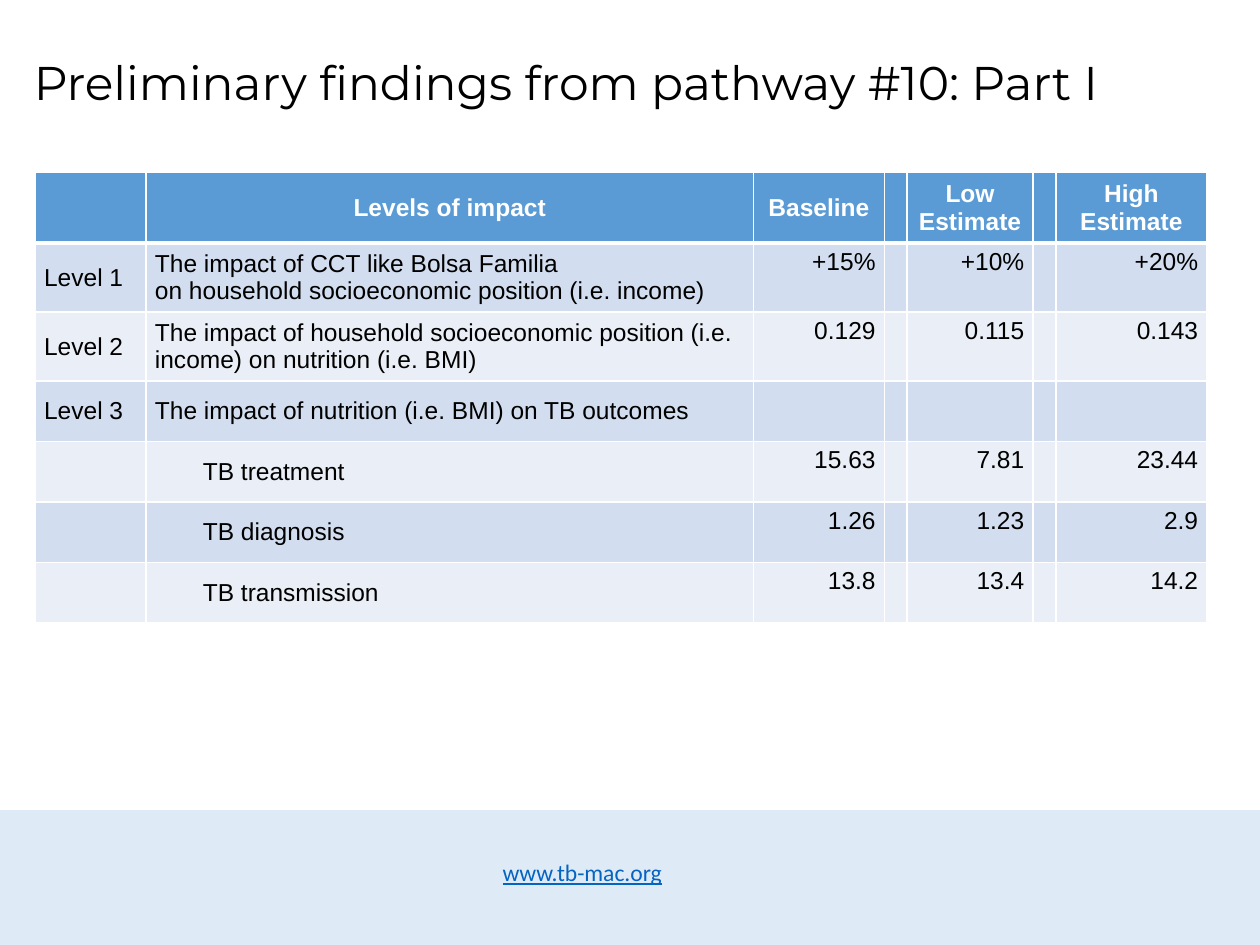
from lxml import etree
from pptx import Presentation
from pptx import util as u
from pptx.dml.color import RGBColor
from pptx.enum import shapes, text
from pptx.oxml.ns import qn

WIDTH, HEIGHT = 10, 7.5
TITLE = "Preliminary findings from pathway #10: Part I"
SITE = "www.tb-mac.org"
HEADINGS = ("", "Levels of impact", "Baseline", "Low Estimate", "High Estimate")
FINDINGS = [
    ("Level 1", "The impact of CCT like Bolsa Familia\n"
     "on household socioeconomic position (i.e. income)", "+15%", "+10%", "+20%"),
    ("Level 2", "The impact of household socioeconomic position (i.e. income) "
     "on nutrition (i.e. BMI)", "0.129", "0.115", "0.143"),
    ("Level 3", "The impact of nutrition (i.e. BMI) on TB outcomes", "", "", ""),
    ("", "TB treatment", "15.63", "7.81", "23.44"),
    ("", "TB diagnosis", "1.26", "1.23", "2.9"),
    ("", "TB transmission", "13.8", "13.4", "14.2"),
]
COLUMN_WIDTHS = (0.88, 4.82, 1.04, 0.18, 1, 0.18, 1.2)
ROW_HEIGHTS = (0.56, 0.53, 0.53, 0.48, 0.48, 0.48, 0.48)
CONTENT_COLUMNS = (0, 1, 2, 4, 6)
HEADER_FILL, BANDS = "5B9BD5", ("D2DEEF", "EAEFF7")
LEFT, CENTER, RIGHT = text.PP_ALIGN.LEFT, text.PP_ALIGN.CENTER, text.PP_ALIGN.RIGHT
TOP, MIDDLE = text.MSO_ANCHOR.TOP, text.MSO_ANCHOR.MIDDLE


def color(value):
    return RGBColor.from_string(value)


def write(frame, words, size=14, font="Arial", ink="000000", bold=False,
          underline=False, align=LEFT, spacing=None):
    for number, line in enumerate(words.split("\n")):
        paragraph = frame.add_paragraph() if number else frame.paragraphs[0]
        paragraph.alignment = align
        paragraph.line_spacing = spacing
        run = paragraph.add_run()
        run.text = line
        run.font.size, run.font.name = u.Pt(size), font
        run.font.bold, run.font.underline = bold, underline
        run.font.color.rgb = color(ink)


def add_words(slide, box, words, wrap=True, anchor=TOP, **style):
    frame = slide.shapes.add_textbox(*map(u.Inches, box)).text_frame
    frame.word_wrap, frame.vertical_anchor = wrap, anchor
    write(frame, words, **style)


def add_border(cell, side, points):
    line = etree.SubElement(cell._tc.get_or_add_tcPr(), qn("a:ln" + side),
                            w=str(u.Pt(points)))
    fill = etree.SubElement(line, qn("a:solidFill"))
    etree.SubElement(fill, qn("a:srgbClr"), val="FFFFFF")


def format_cell(cell, fill, row):
    for side in "LRTB":
        thick = (row, side) in ((0, "B"), (1, "T"))
        add_border(cell, side, 3 if thick else 1)
    cell.fill.solid()
    cell.fill.fore_color.rgb = color(fill)
    cell.margin_left = cell.margin_right = u.Inches(0.07)
    cell.margin_top = cell.margin_bottom = u.Inches(0.04)


def add_findings(slide):
    table = slide.shapes.add_table(
        len(ROW_HEIGHTS), len(COLUMN_WIDTHS), u.Inches(0.28), u.Inches(1.37),
        u.Inches(sum(COLUMN_WIDTHS)), u.Inches(sum(ROW_HEIGHTS))).table
    table.first_row = table.horz_banding = False
    for column, width in zip(table.columns, COLUMN_WIDTHS):
        column.width = u.Inches(width)
    for row, height in zip(table.rows, ROW_HEIGHTS):
        row.height = u.Inches(height)

    for row, entries in enumerate([HEADINGS] + FINDINGS):
        header = row == 0
        fill = HEADER_FILL if header else BANDS[(row - 1) % 2]
        for column in range(len(COLUMN_WIDTHS)):
            format_cell(table.cell(row, column), fill, row)
        for column, words in zip(CONTENT_COLUMNS, entries):
            if not words:
                continue
            cell = table.cell(row, column)
            label = column < 2
            cell.vertical_anchor = MIDDLE if header or label else TOP
            if column == 1 and not entries[0] and not header:
                cell.margin_left = u.Inches(0.45)
            write(cell.text_frame, words, bold=header,
                  ink="FFFFFF" if header else "000000",
                  align=CENTER if header else LEFT if label else RIGHT)


def main():
    deck = Presentation()
    deck.slide_width, deck.slide_height = u.Inches(WIDTH), u.Inches(HEIGHT)
    slide = deck.slides.add_slide(deck.slide_layouts[6])

    footer_top = 6.43
    footer = slide.shapes.add_shape(
        shapes.MSO_SHAPE.RECTANGLE, 0, u.Inches(footer_top),
        u.Inches(WIDTH), u.Inches(HEIGHT - footer_top))
    footer.shadow.inherit = False
    footer.fill.solid()
    footer.fill.fore_color.rgb = color("DEEBF7")
    footer.line.fill.background()

    add_words(slide, (3.89, 6.76, 1.48, 0.33), SITE, wrap=False, size=13.5,
              font="Calibri", ink="0563C1", underline=True)
    add_words(slide, (0.17, 0.22, 9.86, 0.91), TITLE, anchor=MIDDLE, size=27,
              font="Montserrat", spacing=0.9)
    add_findings(slide)
    deck.save("out.pptx")


if __name__ == "__main__":
    main()
